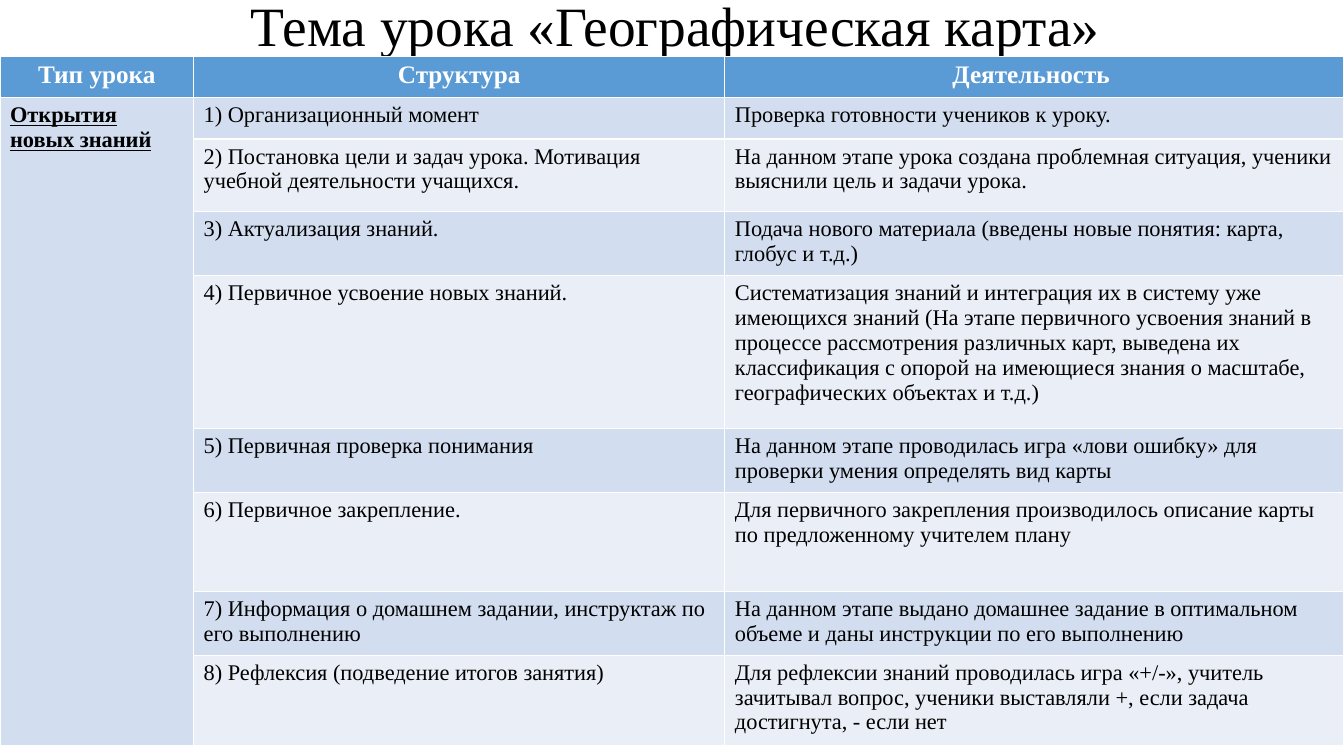
from dataclasses import dataclass

from pptx import Presentation
from pptx.dml.color import RGBColor
from pptx.enum.text import MSO_ANCHOR, PP_ALIGN
from pptx.table import _Cell
from pptx.util import Inches, Pt

FONT = "Times New Roman"
COLORS = {
    "header": "5B9BD5",
    "band_dark": "D2DEEF",
    "band_light": "EAEFF7",
    "white": "FFFFFF",
    "black": "000000",
}


@dataclass
class Stage:
    structure: str
    activity: str
    height: float


HEADERS = ["Тип урока", "Структура", "Деятельность "]
HEADER_HEIGHT = 0.41
COLUMN_WIDTHS = [1.92, 5.27, 6.14]
LESSON_TYPE = "Открытия новых знаний"
STAGES = [
    Stage("1) Организационный момент",
          "Проверка готовности учеников к уроку.", 0.41),
    Stage("2) Постановка цели и задач урока. Мотивация учебной деятельности учащихся.",
          "На данном этапе урока создана проблемная ситуация, ученики выяснили "
          "цель и задачи урока.", 0.72),
    Stage("3) Актуализация знаний.",
          "Подача нового материала (введены новые понятия: карта, глобус и т.д.)", 0.59),
    Stage("4) Первичное усвоение новых знаний.",
          "Систематизация знаний и интеграция их в систему уже имеющихся знаний "
          "(На этапе первичного усвоения знаний в процессе рассмотрения различных карт, "
          "выведена их классификация с опорой на имеющиеся знания о масштабе, "
          "географических объектах и т.д.)", 1.52),
    Stage("5) Первичная проверка понимания",
          "На данном этапе проводилась игра «лови ошибку» для проверки умения "
          "определять вид карты", 0.59),
    Stage("6) Первичное закрепление.",
          "Для первичного закрепления производилось описание карты по предложенному "
          "учителем плану", 0.98),
    Stage("7) Информация о домашнем задании, инструктаж по его выполнению",
          "На данном этапе выдано домашнее задание в оптимальном объеме и даны "
          "инструкции по его выполнению", 0.59),
    Stage("8) Рефлексия (подведение итогов занятия)",
          "Для рефлексии знаний проводилась игра «+/-», учитель зачитывал вопрос, "
          "ученики выставляли +, если задача достигнута, - если нет", 0.83),
]


def rgb(name: str) -> RGBColor:
    return RGBColor.from_string(COLORS[name])


def fill_cell(cell: _Cell, text: str, fill: str, size: int = 16, color: str = "black",
              bold: bool = False, underline: bool = False,
              align: PP_ALIGN = PP_ALIGN.LEFT) -> None:
    cell.fill.solid()
    cell.fill.fore_color.rgb = rgb(fill)
    p = cell.text_frame.paragraphs[0]
    p.text = text
    p.alignment = align
    p.font.name = FONT
    p.font.size = Pt(size)
    p.font.bold = bold
    p.font.underline = underline
    p.font.color.rgb = rgb(color)


def add_title(s) -> None:
    tf = s.shapes.add_textbox(Inches(0.95), 0, Inches(11.5), Inches(0.56)).text_frame
    tf.word_wrap = True
    tf.vertical_anchor = MSO_ANCHOR.MIDDLE
    p = tf.paragraphs[0]
    p.text = "Тема урока «Географическая карта»"
    p.alignment = PP_ALIGN.CENTER
    p.line_spacing = 0.9
    p.font.name = FONT
    p.font.size = Pt(39.6)
    p.font.color.rgb = rgb("black")


def add_stage_table(s) -> None:
    heights = [HEADER_HEIGHT] + [stage.height for stage in STAGES]
    table = s.shapes.add_table(len(heights), len(HEADERS), 0, Inches(0.56),
                               Inches(sum(COLUMN_WIDTHS)), Inches(sum(heights))).table
    for column, width in zip(table.columns, COLUMN_WIDTHS):
        column.width = Inches(width)
    for row, height in zip(table.rows, heights):
        row.height = Inches(height)

    for col, header in enumerate(HEADERS):
        fill_cell(table.cell(0, col), header, "header", size=18, color="white",
                  bold=True, align=PP_ALIGN.CENTER)

    table.cell(1, 0).merge(table.cell(len(STAGES), 0))
    fill_cell(table.cell(1, 0), LESSON_TYPE, "band_dark", bold=True, underline=True)
    for row, stage in enumerate(STAGES, start=1):
        band = "band_dark" if row % 2 else "band_light"
        fill_cell(table.cell(row, 1), stage.structure, band)
        fill_cell(table.cell(row, 2), stage.activity, band)


def main() -> None:
    prs = Presentation()
    prs.slide_width, prs.slide_height = Inches(13.33), Inches(7.5)
    s = prs.slides.add_slide(prs.slide_layouts[6])
    add_title(s)
    add_stage_table(s)
    prs.save("out.pptx")


if __name__ == "__main__":
    main()
